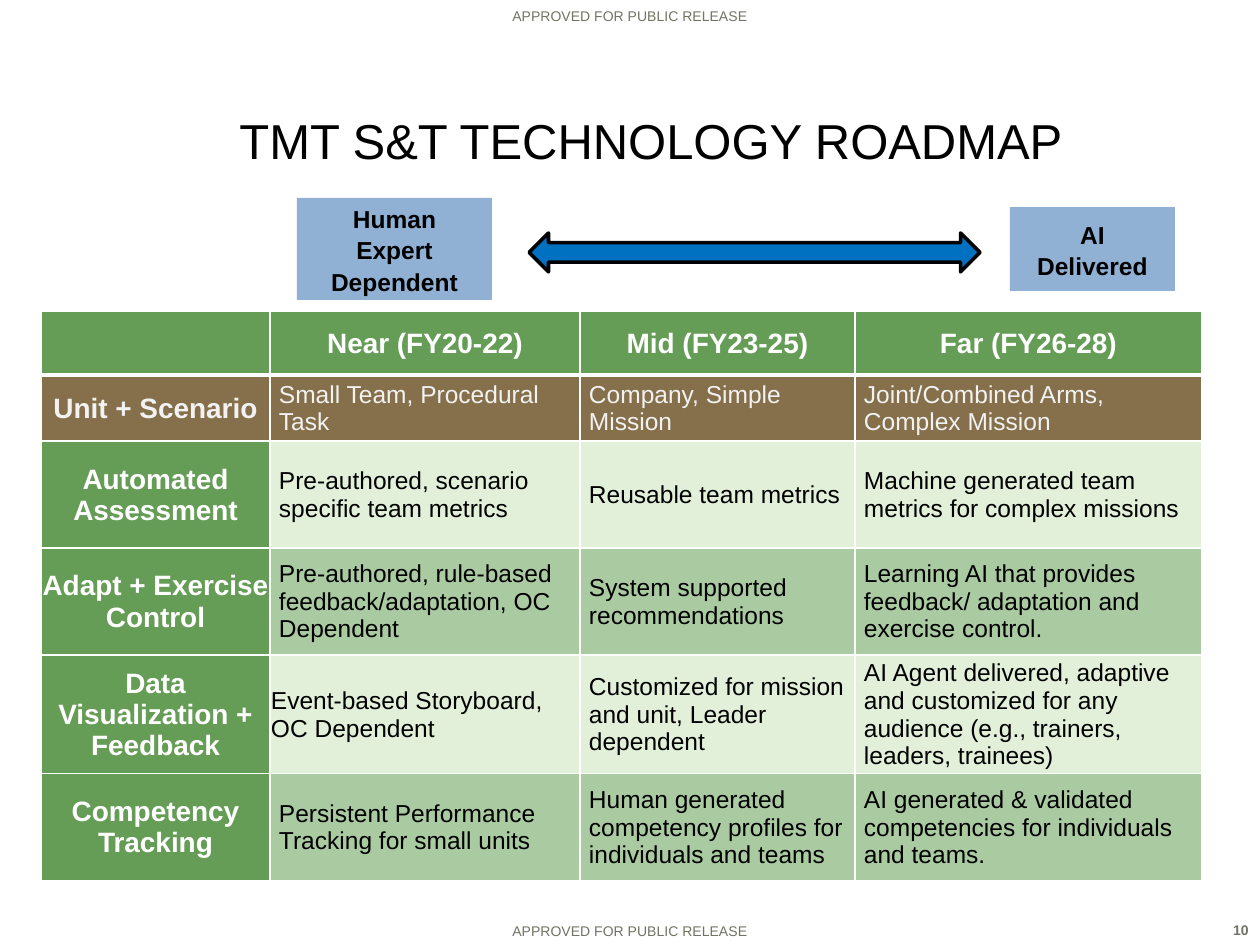
from dataclasses import dataclass

from lxml.etree import SubElement
from pptx import Presentation
from pptx.dml.color import RGBColor
from pptx.enum.shapes import MSO_SHAPE
from pptx.enum.text import MSO_ANCHOR, PP_ALIGN
from pptx.oxml.ns import qn
from pptx.util import Pt

EMU_PER_PX = 914400 / 126
FONT = "Arial"

WHITE = RGBColor(0xFF, 0xFF, 0xFF)
BLACK = RGBColor(0x00, 0x00, 0x00)
GRAY = RGBColor(0x71, 0x73, 0x65)
OFF_WHITE = RGBColor(0xF2, 0xF2, 0xF2)
GREEN = RGBColor(0x65, 0x9C, 0x56)
MID_GREEN = RGBColor(0xAA, 0xCB, 0xA1)
PALE_GREEN = RGBColor(0xE2, 0xF0, 0xD9)
BROWN = RGBColor(0x85, 0x70, 0x4B)
LIGHT_BLUE = RGBColor(0x90, 0xB0, 0xD4)
BLUE = RGBColor(0x00, 0x70, 0xC0)


@dataclass(frozen=True)
class Box:
    left: int
    top: int
    width: int
    height: int

    def emu(self) -> tuple[int, int, int, int]:
        return px(self.left), px(self.top), px(self.width), px(self.height)


@dataclass(frozen=True)
class Marking:
    text: str
    box: Box
    align: PP_ALIGN = PP_ALIGN.CENTER
    anchor: MSO_ANCHOR = MSO_ANCHOR.BOTTOM
    bold: bool = False


@dataclass(frozen=True)
class Endpoint:
    text: str
    box: Box
    inset: int


@dataclass(frozen=True)
class RoadmapRow:
    label: str
    stages: tuple[str, str, str]
    height: int
    fill: RGBColor
    label_fill: RGBColor = GREEN
    label_color: RGBColor = WHITE
    color: RGBColor = BLACK


RELEASE = "APPROVED FOR PUBLIC RELEASE"
MARKINGS = (
    Marking(RELEASE, Box(189, 915, 882, 30)),
    Marking(RELEASE, Box(0, 0, 1260, 30)),
    Marking("10", Box(1203, 915, 58, 30), PP_ALIGN.RIGHT, MSO_ANCHOR.TOP, True),
)
ENDPOINTS = (
    Endpoint("Human\nExpert Dependent", Box(297, 198, 195, 102), 6),
    Endpoint("AI Delivered", Box(1010, 207, 165, 84), 13),
)
COLUMN_WIDTHS = (229, 310, 275, 347)
HEADER_HEIGHT = 64
PERIODS = ("", "Near (FY20-22)", "Mid (FY23-25)", "Far (FY26-28)")
ROWS = (
    RoadmapRow("Unit + Scenario",
               ("Small Team, Procedural Task", "Company, Simple Mission",
                "Joint/Combined Arms, Complex Mission"),
               66, BROWN, BROWN, OFF_WHITE, OFF_WHITE),
    RoadmapRow("Automated Assessment",
               ("Pre-authored, scenario specific team metrics", "Reusable team metrics",
                "Machine generated team metrics for complex missions"),
               107, PALE_GREEN),
    RoadmapRow("Adapt + Exercise Control",
               ("Pre-authored, rule-based feedback/adaptation, OC Dependent",
                "System supported recommendations",
                "Learning AI that provides feedback/ adaptation and exercise control."),
               107, MID_GREEN),
    RoadmapRow("Data Visualization + Feedback",
               ("Event-based Storyboard, OC Dependent",
                "Customized for mission and unit, Leader dependent",
                "AI Agent delivered, adaptive and customized for any audience "
                "(e.g., trainers, leaders, trainees)"),
               111, PALE_GREEN),
    RoadmapRow("Competency Tracking",
               ("Persistent Performance Tracking for small units",
                "Human generated competency profiles for individuals and teams",
                "AI generated & validated competencies for individuals and teams."),
               107, MID_GREEN),
)
FLUSH_TEXT = "Event-based Storyboard, OC Dependent"


def px(length: int) -> int:
    return round(length * EMU_PER_PX)


def write(frame, text: str, *, size: int, color: RGBColor, bold: bool = False,
          align: PP_ALIGN = PP_ALIGN.LEFT, spacing: float | None = None) -> None:
    for index, line in enumerate(text.split("\n")):
        paragraph = frame.add_paragraph() if index else frame.paragraphs[0]
        paragraph.alignment = align
        if spacing:
            paragraph.line_spacing = spacing
        run = paragraph.add_run()
        run.text = line
        run.font.name = FONT
        run.font.size = Pt(size)
        run.font.bold = bold
        run.font.color.rgb = color


def add_marking(slide, marking: Marking) -> None:
    frame = slide.shapes.add_textbox(*marking.box.emu()).text_frame
    frame.word_wrap = True
    frame.vertical_anchor = marking.anchor
    write(frame, marking.text, size=8, color=GRAY, bold=marking.bold, align=marking.align)


def add_endpoint(slide, endpoint: Endpoint) -> None:
    block = slide.shapes.add_shape(MSO_SHAPE.RECTANGLE, *endpoint.box.emu())
    block.shadow.inherit = False
    block.fill.solid()
    block.fill.fore_color.rgb = LIGHT_BLUE
    block.line.fill.background()
    frame = block.text_frame
    frame.word_wrap = True
    frame.vertical_anchor = MSO_ANCHOR.MIDDLE
    frame.margin_top = frame.margin_bottom = px(endpoint.inset)
    write(frame, endpoint.text, size=14, color=BLACK, bold=True,
          align=PP_ALIGN.CENTER, spacing=1.07)


def set_borders(cell, top: int, bottom: int) -> None:
    properties = cell._tc.get_or_add_tcPr()
    for tag, width in (("a:lnL", 1), ("a:lnR", 1), ("a:lnT", top), ("a:lnB", bottom)):
        line = SubElement(properties, qn(tag), w=str(Pt(width)))
        SubElement(SubElement(line, qn("a:solidFill")), qn("a:srgbClr"), val=str(WHITE))


def fill_cell(cell, text: str, fill: RGBColor, color: RGBColor, *, heading: bool,
              top: int = 1, bottom: int = 1) -> None:
    set_borders(cell, top, bottom)
    cell.fill.solid()
    cell.fill.fore_color.rgb = fill
    cell.vertical_anchor = MSO_ANCHOR.MIDDLE
    cell.margin_left = px(1 if heading or text == FLUSH_TEXT else 9)
    cell.margin_top = cell.margin_right = px(1)
    cell.margin_bottom = 0
    if text:
        write(cell.text_frame, text, size=16 if heading else 14, color=color, bold=heading,
              align=PP_ALIGN.CENTER if heading else PP_ALIGN.LEFT)


def add_roadmap(slide) -> None:
    heights = (HEADER_HEIGHT, *(row.height for row in ROWS))
    box = Box(41, 311, sum(COLUMN_WIDTHS), sum(heights))
    table = slide.shapes.add_table(len(heights), len(COLUMN_WIDTHS), *box.emu()).table
    for column, width in zip(table.columns, COLUMN_WIDTHS):
        column.width = px(width)
    for table_row, height in zip(table.rows, heights):
        table_row.height = px(height)
    for index, period in enumerate(PERIODS):
        fill_cell(table.cell(0, index), period, GREEN, WHITE, heading=True, bottom=3)
    for number, row in enumerate(ROWS, start=1):
        top = 3 if number == 1 else 1
        fill_cell(table.cell(number, 0), row.label, row.label_fill, row.label_color,
                  heading=True, top=top)
        for index, stage in enumerate(row.stages, start=1):
            fill_cell(table.cell(number, index), stage, row.fill, row.color,
                      heading=False, top=top)


def main() -> None:
    deck = Presentation()
    deck.slide_width, deck.slide_height = px(1260), px(945)
    slide = deck.slides.add_slide(deck.slide_layouts[5])

    # Release markings and page number
    for marking in MARKINGS:
        add_marking(slide, marking)

    # Title
    title = slide.shapes.title
    title.left, title.top, title.width, title.height = Box(116, 103, 1070, 73).emu()
    title.text_frame.vertical_anchor = MSO_ANCHOR.MIDDLE
    write(title.text_frame, "TMT S&T TECHNOLOGY ROADMAP", size=28, color=BLACK,
          align=PP_ALIGN.CENTER)

    # Roadmap table
    add_roadmap(slide)

    # Span from human dependent to AI delivered
    span = slide.shapes.add_shape(MSO_SHAPE.UP_DOWN_ARROW, *Box(735, 27, 39, 451).emu())
    span.rotation = 90
    span.shadow.inherit = False
    span.fill.solid()
    span.fill.fore_color.rgb = BLUE
    span.line.color.rgb = BLACK
    span.line.width = Pt(2)
    for endpoint in ENDPOINTS:
        add_endpoint(slide, endpoint)

    deck.save("out.pptx")


if __name__ == "__main__":
    main()
